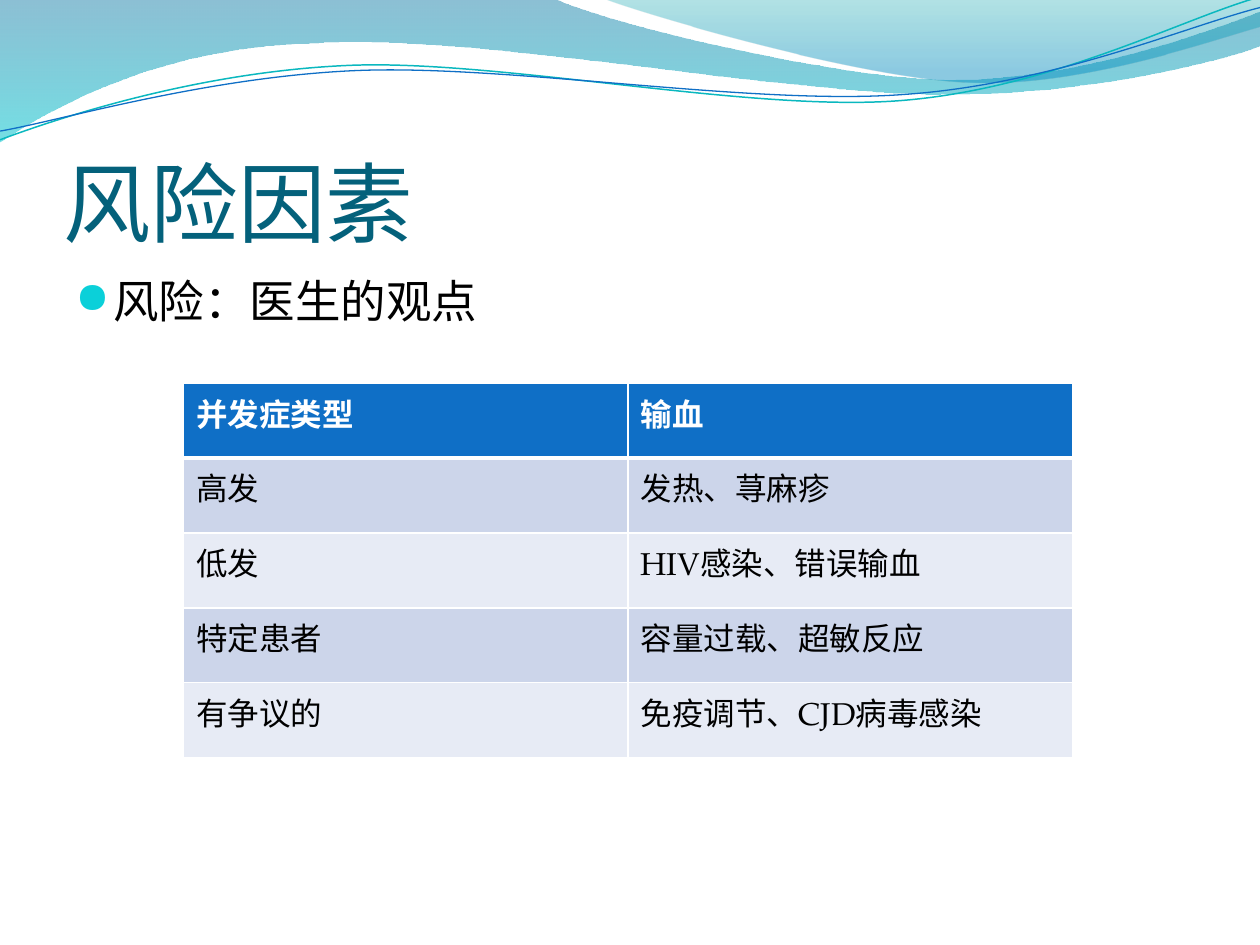
from lxml.etree import SubElement
from pptx import Presentation
from pptx.dml.color import RGBColor
from pptx.enum.text import MSO_ANCHOR, MSO_AUTO_SIZE, PP_ALIGN
from pptx.oxml.ns import qn
from pptx.util import Pt

BLACK = RGBColor(0x00, 0x00, 0x00)
WHITE = RGBColor(0xFF, 0xFF, 0xFF)
TITLE_TEAL = RGBColor(0x04, 0x61, 0x7B)
BULLET_CYAN = RGBColor(0x0B, 0xD0, 0xD9)
LINE_TEAL = RGBColor(0x0A, 0xB8, 0xBF)
BLUE = RGBColor(0x0F, 0x6F, 0xC6)
BAND_DARK = RGBColor(0xCC, 0xD5, 0xEA)
BAND_LIGHT = RGBColor(0xE7, 0xEB, 0xF5)
WAVE_BLUE = RGBColor(0x00, 0x74, 0xA1)
WAVE_CYAN = RGBColor(0x00, 0xC6, 0xCF)
CREST_TEAL = RGBColor(0x00, 0xA1, 0xA9)
CREST_BLUE = RGBColor(0x00, 0x8B, 0xBF)
HEADING_FONT = "Calibri"
BODY_FONT = "TeX Gyre Pagella"


def write_text(text_frame, text, size, color, font=BODY_FONT, bold=False):
    paragraph = text_frame.paragraphs[0]
    run = paragraph.add_run()
    run.text = text
    run.font.name = font
    run.font.size = Pt(size)
    run.font.bold = bold
    run.font.color.rgb = color
    return paragraph


def draw_path(shapes, start, segments, close):
    """Segments hold one point for a line, three for a Bezier curve."""
    points = [(Pt(x), Pt(y)) for segment in segments for x, y in segment]
    builder = shapes.build_freeform(Pt(start[0]), Pt(start[1]))
    builder.add_line_segments(points, close=close)
    shape = builder.convert_to_shape()
    shape.shadow.inherit = False
    # Join each run of three line points into one curve
    line_elements = iter(list(shape._element.spPr.iter(qn("a:lnTo"))))
    for segment in segments:
        first, *others = [next(line_elements) for _ in segment]
        if others:
            first.tag = qn("a:cubicBezTo")
        for other in others:
            first.append(other[0])
            other.getparent().remove(other)
    return shape


presentation = Presentation()
presentation.slide_width = Pt(720)
presentation.slide_height = Pt(540)
slide = presentation.slides.add_slide(presentation.slide_layouts[5])

# Gradient waves: start, segments, stops of (position, colour, opacity in %)
waves = [
    ((0, 0),
     [[(316.8, -0.7)],
      [(342.7, 12.2), (478.1, 45.4), (545.8, 45.4)],
      [(614.2, 45.4), (689.8, 18.7), (720, 6.5)],
      [(720.7, 25.9)],
      [(707.8, 31.7), (626.4, 54.7), (537.1, 54)],
      [(447.8, 54), (275, 20.2), (185, 24.5)],
      [(92.9, 25.9), (33.1, 59.8), (-0.7, 81.4)]],
     [(0, WAVE_BLUE, 45), (1, WAVE_CYAN, 55)]),
    ((344.9, -0.7),
     [[(366.5, 7.9), (491, 44.6), (553.7, 46.8)],
      [(616.3, 49.7), (691.9, 23), (720, 15.1)],
      [(720, 0)]],
     [(0, CREST_TEAL, 30), (0.8, CREST_BLUE, 45)]),
]
for start, segments, stops in waves:
    wave = draw_path(slide.shapes, start, segments, close=True)
    wave.line.fill.background()
    wave.fill.gradient()
    wave.fill.gradient_angle = 270
    for stop, (position, color, _) in zip(wave.fill.gradient_stops, stops):
        stop.position = position
        stop.color.rgb = color
    for element, (_, _, opacity) in zip(wave._element.spPr.iter(qn("a:srgbClr")), stops):
        SubElement(element, qn("a:alpha"), val=str(opacity * 1000))

# Thin wavy lines
wavy_lines = [
    ((0, 79.9),
     [[(34.6, 67), (113.8, 41), (199.4, 37.4)],
      [(284.4, 33.8), (427, 64.1), (513.4, 57.6)],
      [(599.8, 51.1), (675.4, 10.8), (718.6, -1.4)]],
     LINE_TEAL, 0.85),
    ((0, 74.9),
     [[(33.8, 69.1), (118.1, 43.9), (203.8, 40.3)],
      [(290.2, 36.7), (429.8, 60.5), (516.2, 54)],
      [(601.9, 48.2), (677.5, 15.1), (720, 4.3)]],
     BLUE, 0.75),
]
for start, segments, color, width in wavy_lines:
    wavy_line = draw_path(slide.shapes, start, segments, close=False)
    wavy_line.fill.background()
    wavy_line.line.color.rgb = color
    wavy_line.line.width = Pt(width)

# Title
title = slide.shapes.title
title.left, title.top, title.width, title.height = Pt(36), Pt(55.4), Pt(648), Pt(90)
title_frame = title.text_frame
title_frame.auto_size = MSO_AUTO_SIZE.NONE
title_frame.vertical_anchor = MSO_ANCHOR.BOTTOM
title_frame.margin_left = title_frame.margin_right = title_frame.margin_bottom = 0
title_frame.margin_top = Pt(3.6)
paragraph = write_text(title_frame, "风险因素", 50, TITLE_TEAL, font=HEADING_FONT)
paragraph.alignment = PP_ALIGN.LEFT

# Bullet line
body = slide.shapes.add_textbox(Pt(36), Pt(152.6), Pt(648), Pt(345.6))
body.text_frame.word_wrap = True
paragraph = write_text(body.text_frame, "风险：医生的观点", 26, BLACK)
paragraph.space_before = Pt(5.2)
properties = paragraph._p.get_or_add_pPr()
properties.set("marL", str(Pt(21.6)))
properties.set("indent", str(-Pt(21.6)))
bullet_color = SubElement(properties, qn("a:buClr"))
SubElement(bullet_color, qn("a:srgbClr"), val=str(BULLET_CYAN))
SubElement(properties, qn("a:buSzPct"), val="95000")
SubElement(properties, qn("a:buFont"), typeface="OpenSymbol")
SubElement(properties, qn("a:buChar"), char="●")

# Complications table
rows = [
    ("并发症类型", "输血"),
    ("高发", "发热、荨麻疹"),
    ("低发", "HIV感染、错误输血"),
    ("特定患者", "容量过载、超敏反应"),
    ("有争议的", "免疫调节、CJD病毒感染"),
]
table = slide.shapes.add_table(len(rows), 2, Pt(105), Pt(219), Pt(508), Pt(214)).table
for row_index, row in enumerate(rows):
    table.rows[row_index].height = Pt(42.8)
    header = row_index == 0
    band = BLUE if header else (BAND_LIGHT, BAND_DARK)[row_index % 2]
    for column_index, text in enumerate(row):
        cell = table.cell(row_index, column_index)
        write_text(cell.text_frame, text, 18, WHITE if header else BLACK, bold=header)
        cell_properties = cell._tc.get_or_add_tcPr()
        for side in ("L", "R", "T", "B"):
            thick = (header and side == "B") or (row_index == 1 and side == "T")
            border = SubElement(cell_properties, qn(f"a:ln{side}"), w=str(Pt(3 if thick else 1)))
            border_fill = SubElement(border, qn("a:solidFill"))
            SubElement(border_fill, qn("a:srgbClr"), val=str(WHITE))
        cell.fill.solid()
        cell.fill.fore_color.rgb = band

presentation.save("out.pptx")
